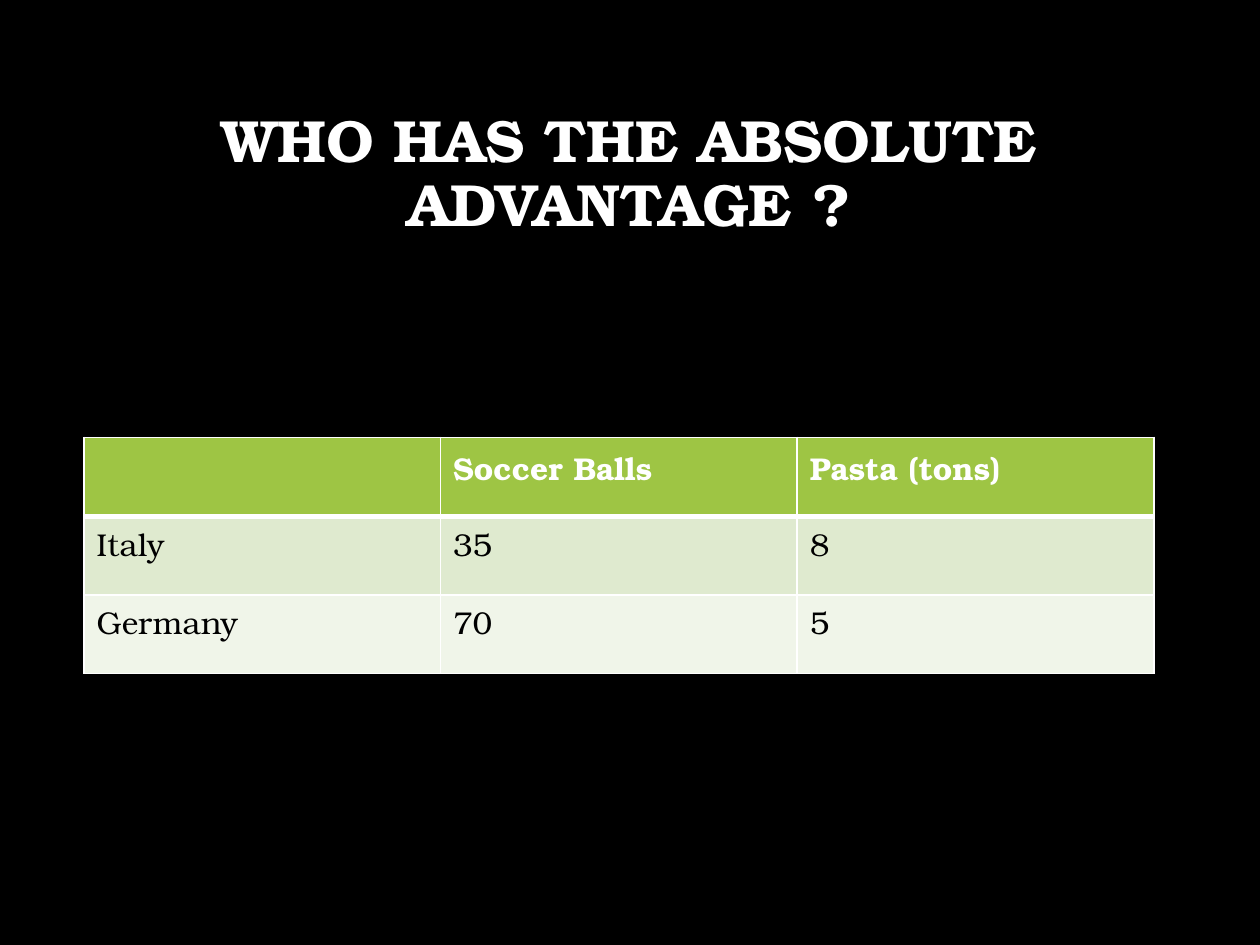
from dataclasses import dataclass
from lxml.etree import SubElement
from pptx import Presentation
from pptx.dml.color import RGBColor
from pptx.enum.text import MSO_ANCHOR, MSO_AUTO_SIZE, PP_ALIGN
from pptx.oxml.ns import qn
from pptx.util import Pt


@dataclass(frozen=True)
class Theme:
    face: str = "TeX Gyre Bonum"
    back: str = "000000"
    light: str = "FFFFFF"
    dark: str = "000000"
    head: str = "9EC544"
    bands: tuple = ("DFEACF", "F0F5E9")
    big: int = 34
    small: int = 18
    thin: int = 1
    thick: int = 3


THEME = Theme()
ROWS = [
    ["", "Soccer Balls", "Pasta (tons)"],
    ["Italy", "35", "8"],
    ["Germany", "70", "5"],
]


def apply(item, form):
    for name, value in form.items():
        setattr(item, name, value)


def paint(fill, color):
    fill.solid()
    fill.fore_color.rgb = RGBColor.from_string(color)


def style(para, size, color, bold):
    apply(para.font, {"name": THEME.face, "size": Pt(size), "bold": bold})
    para.font.color.rgb = RGBColor.from_string(color)


def edge(cell, sides):
    props = cell._tc.get_or_add_tcPr()
    for side, width in sides.items():
        line = SubElement(props, qn(f"a:ln{side}"), w=str(Pt(width)))
        fill = SubElement(line, qn("a:solidFill"))
        SubElement(fill, qn("a:srgbClr"), val=THEME.light)


def add_title(slide, text):
    title = slide.shapes.title
    apply(title, {"left": Pt(54), "top": Pt(48), "width": Pt(611), "height": Pt(104.5)})
    frame = title.text_frame
    apply(frame, {
        "text": text,
        "word_wrap": True,
        "auto_size": MSO_AUTO_SIZE.NONE,
        "vertical_anchor": MSO_ANCHOR.MIDDLE,
    })
    para = frame.paragraphs[0]
    apply(para, {"alignment": PP_ALIGN.CENTER, "line_spacing": 0.9})
    style(para, THEME.big, THEME.light, True)


def fill_cell(cell, text, row):
    head = row == 0
    edge(cell, {
        "L": THEME.thin,
        "R": THEME.thin,
        "T": THEME.thick if row == 1 else THEME.thin,
        "B": THEME.thick if head else THEME.thin,
    })
    paint(cell.fill, THEME.head if head else THEME.bands[(row - 1) % 2])
    cell.text = text
    style(cell.text_frame.paragraphs[0], THEME.small,
          THEME.light if head else THEME.dark, head)


def add_grid(slide, rows):
    table = slide.shapes.add_table(
        len(rows), len(rows[0]), Pt(48), Pt(250), Pt(611.4), Pt(135)).table
    for r, row in enumerate(rows):
        for c, text in enumerate(row):
            fill_cell(table.cell(r, c), text, r)


def main():
    deck = Presentation()
    apply(deck, {"slide_width": Pt(720), "slide_height": Pt(540)})
    slide = deck.slides.add_slide(deck.slide_layouts.get_by_name("Title Only"))
    paint(slide.background.fill, THEME.back)
    add_title(slide, "WHO HAS THE ABSOLUTE ADVANTAGE ?")
    add_grid(slide, ROWS)
    deck.save("out.pptx")


if __name__ == "__main__":
    main()
